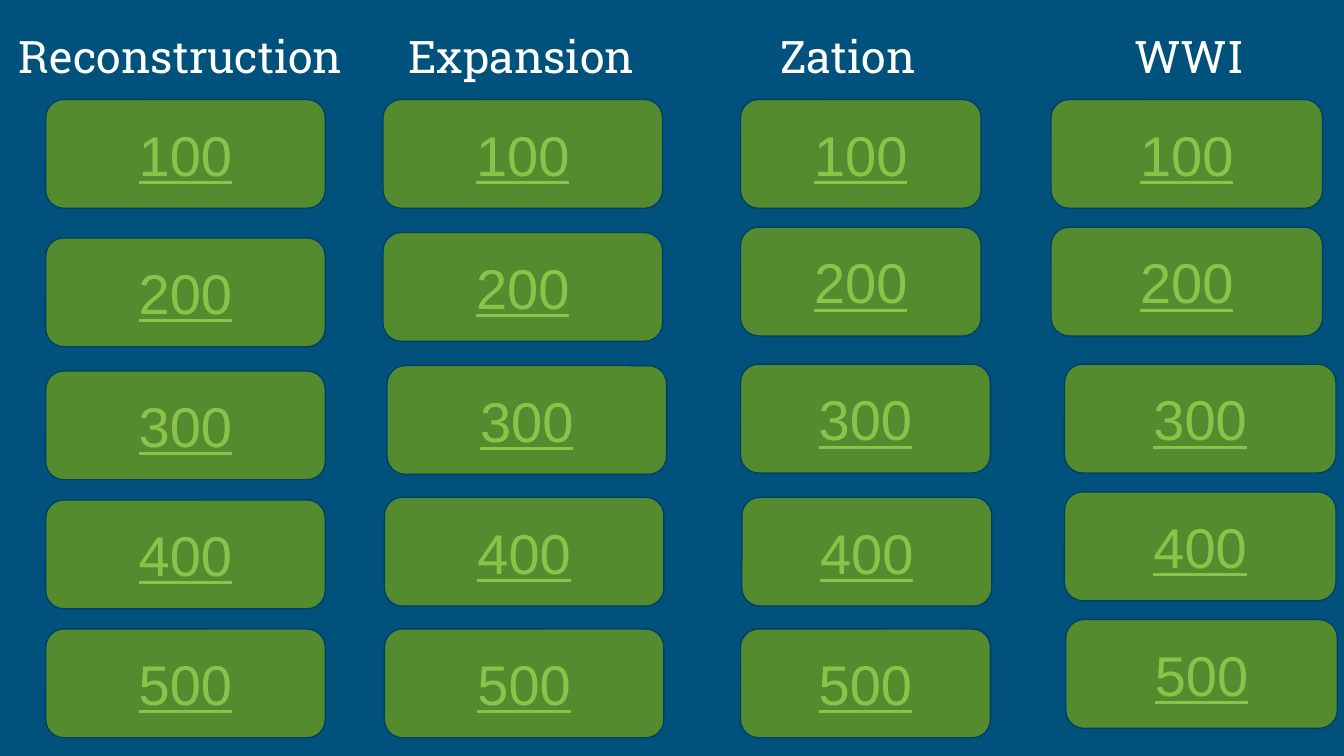
from dataclasses import dataclass

from pptx import Presentation
from pptx.dml.color import RGBColor
from pptx.enum.shapes import MSO_SHAPE
from pptx.enum.text import MSO_ANCHOR, PP_ALIGN
from pptx.util import Inches, Pt

SLIDE_WIDTH = Inches(10)
SLIDE_HEIGHT = SLIDE_WIDTH * 9 // 16
GRID_UNIT = SLIDE_WIDTH / 100
HEADING_HEIGHT, TILE_HEIGHT = 6.1, 8.1
BOARD_TOP = 1.1


@dataclass
class Category:
    """A heading and its tiles, in grid units relative to the column's left and top."""
    title: str
    left: float
    heading_left: float
    heading_width: float
    tile_tops: list
    tile_shifts: list
    tile_widths: list
    indent: float = 0


CATEGORIES = [
    Category("Reconstruction", 3.4, -3, 28.1,
             [6.3, 16.6, 26.5, 36.1, 45.7], [0] * 5, [20.8] * 5),
    Category("Expansion", 28.5, 0.9, 20.2,
             [6.3, 16.2, 26.1, 35.9, 45.7], [0, 0, 0.3, 0.1, 0.1], [20.8] * 5),
    Category("Zation", 55.1, 2, 14.8,
             [6.3, 15.8, 26, 35.9, 45.7], [0, 0, 0, 0.1, 0], [17.9] * 2 + [18.6] * 3),
    Category("WWI", 78.2, 2.7, 14.8,
             [6.3, 15.8, 26, 35.5, 45], [0, 0, 1, 1, 1.1], [20.2] * 5, indent=2.5),
]


def color(hex_value):
    """Turn a hex string into a colour."""
    return RGBColor.from_string(hex_value)


def grid(*units):
    """Convert grid units to slide lengths."""
    return [round(unit * GRID_UNIT) for unit in units]


def write(holder, text, font_name, size, hex_value, underline=False):
    """Write one vertically centred line and return its paragraph."""
    frame = holder.text_frame
    frame.word_wrap = True
    frame.vertical_anchor = MSO_ANCHOR.MIDDLE
    frame.margin_left = frame.margin_right = Inches(0.1)
    frame.margin_top = frame.margin_bottom = Inches(0.1)
    frame.text = text
    line = frame.paragraphs[0]
    font = line.runs[0].font
    font.name, font.size, font.underline = font_name, Pt(size), underline
    font.color.rgb = color(hex_value)
    return line


def add_heading(slide, category, left, top, width, height):
    """Place a category title in the given box."""
    heading = slide.shapes.add_textbox(*grid(left, top, width, height))
    write(heading, category.title, "Roboto Slab", 24, "FFFFFF")
    heading.text_frame.margin_left += grid(category.indent)[0]


def add_tile(slide, points, left, top, width, height):
    """Place a rounded points tile in the given box."""
    tile = slide.shapes.add_shape(MSO_SHAPE.FLOWCHART_ALTERNATE_PROCESS,
                                  *grid(left, top, width, height))
    tile.shadow.inherit = False
    tile.fill.solid()
    tile.fill.fore_color.rgb = color("558B2F")
    tile.line.color.rgb = color("004065")
    tile.line.width = Pt(0.75)
    line = write(tile, str(points), "Arial", 30, "8BC34A", underline=True)
    line.alignment = PP_ALIGN.CENTER


def add_category(slide, category, left, top):
    """Place a heading and its five tiles from the column's top left corner."""
    add_heading(slide, category, left + category.heading_left, top,
                category.heading_width, HEADING_HEIGHT)
    tiles = zip(category.tile_shifts, category.tile_tops, category.tile_widths)
    for rank, (shift, tile_top, width) in enumerate(tiles, start=1):
        add_tile(slide, rank * 100, left + shift, top + tile_top, width, TILE_HEIGHT)


def main():
    """Build and save the quiz board."""
    deck = Presentation()
    deck.slide_width, deck.slide_height = SLIDE_WIDTH, SLIDE_HEIGHT
    slide = deck.slides.add_slide(deck.slide_layouts[6])
    slide.background.fill.solid()
    slide.background.fill.fore_color.rgb = color("00517C")
    for category in CATEGORIES:
        add_category(slide, category, category.left, BOARD_TOP)
    deck.save("out.pptx")


if __name__ == "__main__":
    main()
